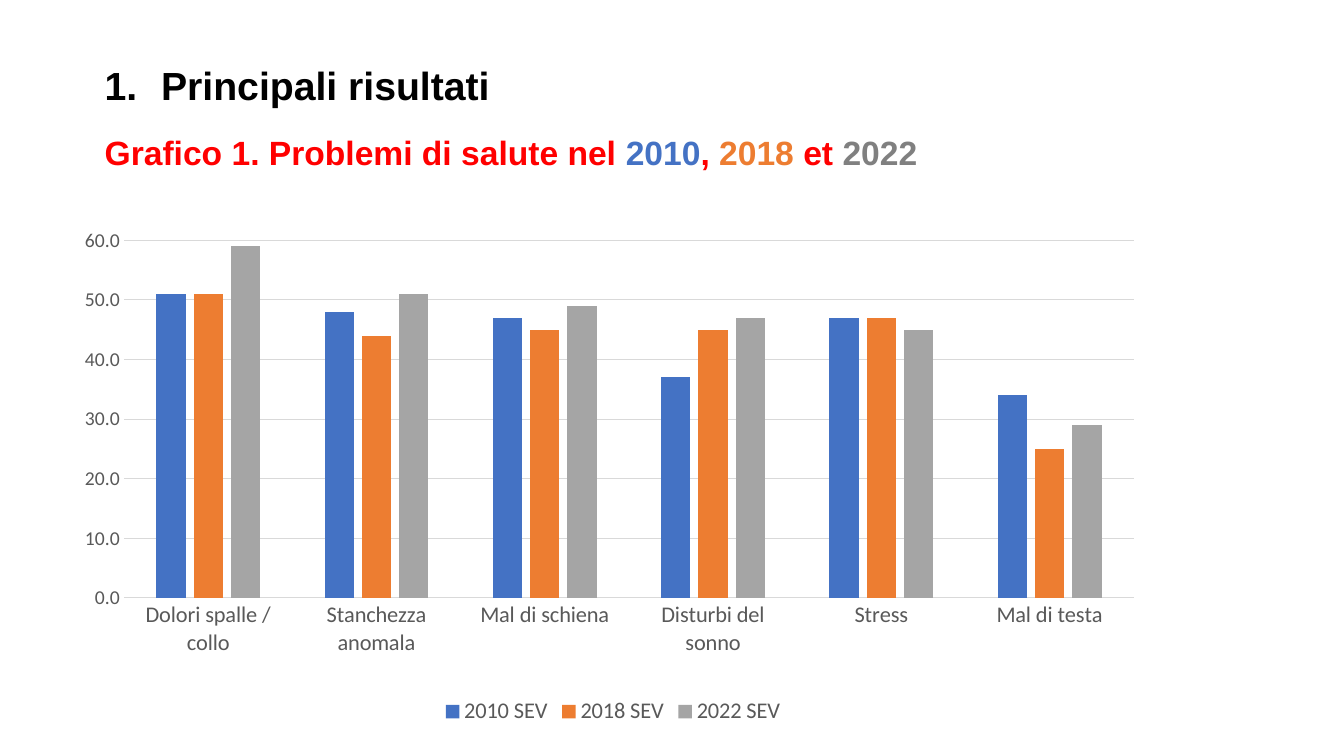
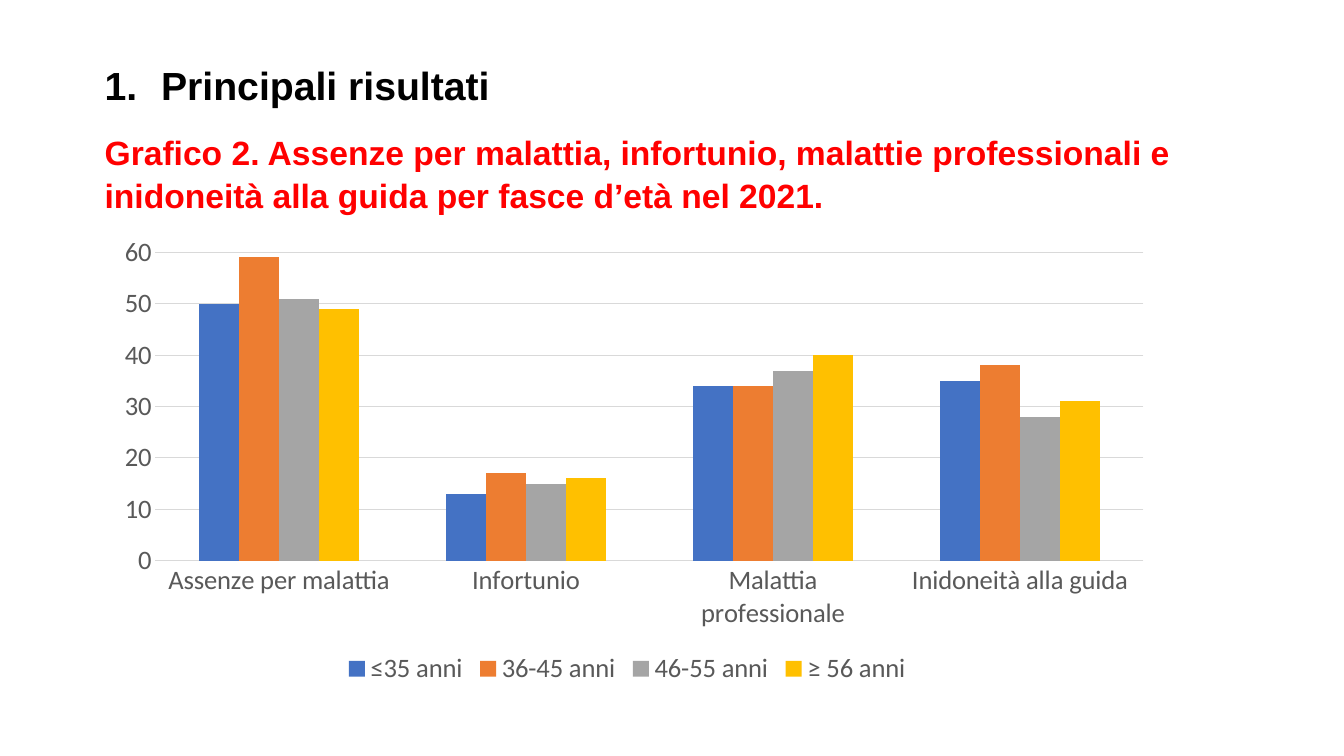
import pptx
import pptx.util
import pptx.dml.color
import pptx.chart.data
import pptx.enum.chart
import pptx.oxml
import pptx.oxml.ns

Pt = pptx.util.Pt
Inches = pptx.util.Inches
qn = pptx.oxml.ns.qn

WIDE, HIGH = 13.33, 7.5
COLORS = {
    "black": "000000", "red": "FF0000", "blue": "4472C4", "orange": "ED7D31",
    "gray": "A5A5A5", "gold": "FFC000", "dark": "808080",
    "label": "595959", "grid": "D9D9D9",
}
SERIES = ["blue", "orange", "gray", "gold"]
TITLE = "Principali risultati"
INDENT = Inches(0.56)


def color(name):
    return pptx.dml.color.RGBColor.from_string(COLORS[name])


def place(box):
    """Turn percentages of the slide into left, top, width, height."""
    return [Inches(part / 100 * side)
            for part, side in zip(box, (WIDE, HIGH, WIDE, HIGH))]


def style(font, size, tone, face="Calibri", bold=False):
    font.size, font.name, font.bold = Pt(size), face, bold
    font.color.rgb = color(tone)


def write(para, text, size=24, tone="red", face="Arial", bold=True):
    run = para.add_run()
    run.text = text
    style(run.font, size, tone, face, bold)


def number(para):
    """Number the paragraph with a hanging indent."""
    props = para._p.get_or_add_pPr()
    props.set("marL", str(INDENT))
    props.set("indent", str(-INDENT))
    bullet = props.makeelement(qn("a:buAutoNum"), {"type": "arabicPeriod"})
    props.append(bullet)


def heading(slide, box, parts):
    frame = slide.shapes.add_textbox(*place(box)).text_frame
    frame.word_wrap = True
    frame.margin_top = Inches(0.08)
    title = frame.paragraphs[0]
    number(title)
    title.space_after = Pt(16)
    write(title, TITLE, size=28, tone="black")
    caption = frame.add_paragraph()
    for text, tone in parts:
        write(caption, text, tone=tone)
    for para in frame.paragraphs:
        para.line_spacing = 1.05


def layout(chart, plot):
    """Fix the inner plot area, given in percent of the chart."""
    area = chart._chartSpace.chart.plotArea
    for old in area.findall(qn("c:layout")):
        area.remove(old)
    left, top, wide, high = [part / 100 for part in plot]
    space = pptx.oxml.ns.nsdecls("c")
    area.insert(0, pptx.oxml.parse_xml(
        f'<c:layout {space}><c:manualLayout><c:layoutTarget val="inner"/>'
        '<c:xMode val="edge"/><c:yMode val="edge"/>'
        f'<c:x val="{left:.3f}"/><c:y val="{top:.3f}"/>'
        f'<c:w val="{wide:.3f}"/><c:h val="{high:.3f}"/>'
        '</c:manualLayout></c:layout>'))


def axes(chart, size, tick, form):
    kinds = pptx.enum.chart
    cat, val = chart.category_axis, chart.value_axis
    for axis, points in ((cat, size), (val, tick)):
        axis.major_tick_mark = kinds.XL_TICK_MARK.NONE
        axis.minor_tick_mark = kinds.XL_TICK_MARK.NONE
        style(axis.tick_labels.font, points, "label")
    val.minimum_scale, val.maximum_scale, val.major_unit = 0, 60, 10
    val.tick_labels.number_format = form
    val.tick_labels.number_format_is_linked = False
    val.has_major_gridlines = True
    val.format.line.fill.background()
    for line in (cat.format.line, val.major_gridlines.format.line):
        line.color.rgb = color("grid")
        line.width = Pt(0.75)


def columns(slide, box, cats, rows, plot, size, tick, form="General", overlap=0):
    kinds = pptx.enum.chart
    data = pptx.chart.data.CategoryChartData()
    data.categories = cats
    for name, vals in rows.items():
        data.add_series(name, vals)
    chart = slide.shapes.add_chart(
        kinds.XL_CHART_TYPE.COLUMN_CLUSTERED, *place(box), data).chart
    style(chart.font, 10, "black")
    chart.has_title = False
    chart.has_legend = True
    chart.legend.position = kinds.XL_LEGEND_POSITION.BOTTOM
    chart.legend.include_in_layout = False
    style(chart.legend.font, size, "label")
    bars = chart.plots[0]
    bars.vary_by_categories = False
    bars.gap_width, bars.overlap = 219, overlap
    for bar, tone in zip(bars.series, SERIES):
        bar.format.fill.solid()
        bar.format.fill.fore_color.rgb = color(tone)
    axes(chart, size, tick, form)
    layout(chart, plot)


def health(slide):
    heading(slide, (7.05, 6.67, 84.62, 18.4), [
        ("Grafico 1. Problemi di salute nel ", "red"), ("2010", "blue"),
        (", ", "red"), ("2018", "orange"), (" et ", "red"), ("2022", "dark")])
    columns(
        slide, (4.65, 28.67, 81.92, 67.87),
        ["Dolori spalle / collo", "Stanchezza anomala", "Mal di schiena",
         "Disturbi del sonno", "Stress", "Mal di testa"],
        {"2010 SEV": [51, 48, 47, 37, 47, 34],
         "2018 SEV": [51, 44, 45, 45, 47, 25],
         "2022 SEV": [59, 51, 49, 47, 45, 29]},
        plot=(5.6, 4.6, 91.7, 69.7), size=16, tick=14,
        form="#,##0.0", overlap=-27)


def absence(slide):
    heading(slide, (7.05, 6.67, 84.62, 23.73), [
        ("Grafico 2. Assenze per malattia, infortunio, malattie professionali "
         "e inidoneità alla guida per fasce d’età nel 2021.", "red")])
    columns(
        slide, (7.05, 30.53, 79.22, 60.8),
        ["Assenze per malattia", "Infortunio", "Malattia professionale",
         "Inidoneità alla guida"],
        {"≤35 anni": [50, 13, 34, 35],
         "36-45 anni": [59, 17, 34, 38],
         "46-55 anni": [51, 15, 37, 28],
         "≥ 56 anni": [49, 16, 40, 31]},
        plot=(5.7, 4.7, 92.8, 67.1), size=19, tick=19)


def main():
    deck = pptx.Presentation()
    deck.slide_width, deck.slide_height = Inches(WIDE), Inches(HIGH)
    for build in (health, absence):
        build(deck.slides.add_slide(deck.slide_layouts[6]))
    deck.save("out.pptx")


if __name__ == "__main__":
    main()
